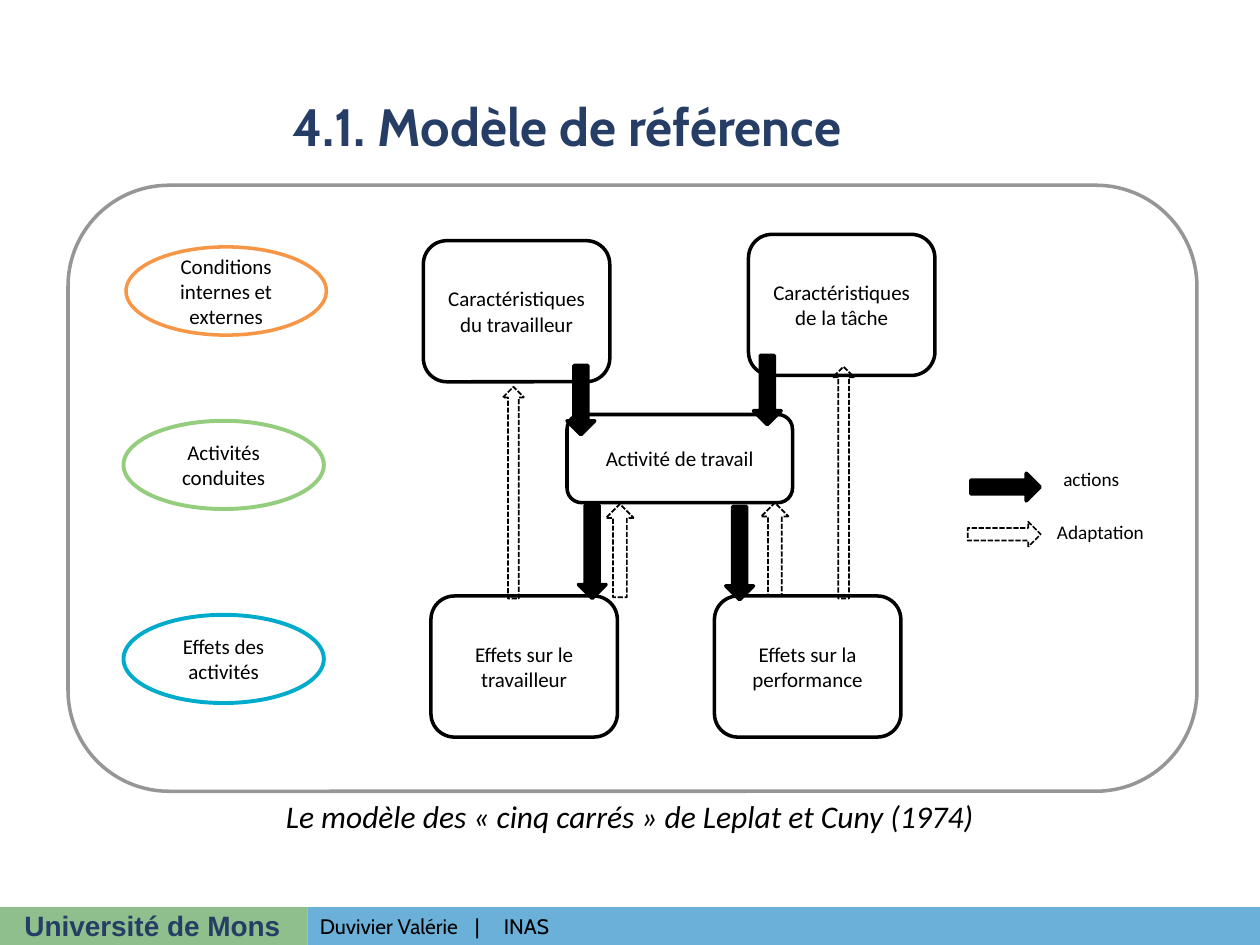
from dataclasses import dataclass

from lxml import etree
from pptx import Presentation
from pptx.dml.color import RGBColor
from pptx.enum import dml, shapes, text
from pptx.oxml.ns import qn
from pptx.util import Inches, Pt

COLORS = {
    "black": "000000", "white": "FFFFFF", "navy": "263E65", "gray": "969696",
    "sage": "8EBF8C", "sky": "6AB0D8",
    "orange": "F79646", "green": "94CD7E", "cyan": "00ABCC",
}
KIND = shapes.MSO_SHAPE
CENTER = text.PP_ALIGN.CENTER
MIDDLE = text.MSO_ANCHOR.MIDDLE


@dataclass
class Node:
    label: str
    left: float
    top: float
    width: float = 1.48
    height: float = 1.12
    kind: int = KIND.ROUNDED_RECTANGLE
    line: str = "black"
    weight: float = 2
    fill: str = ""


@dataclass
class Arrow:
    left: float
    top: float
    height: float
    turn: int = 0
    width: float = 0.22
    solid: bool = True


@dataclass
class Label:
    words: str
    left: float
    top: float
    width: float
    height: float
    size: int
    font: str = "Calibri"
    color: str = "black"
    bold: bool = False
    italic: bool = False
    center: bool = False
    middle: bool = False


def oval(label: str, left: float, top: float, line: str, weight: float = 2.25) -> Node:
    return Node(label, left, top, 1.59, 0.7, KIND.OVAL, line, weight)


def dashed(left: float, top: float, height: float, turn: int = 180,
           width: float = 0.22) -> Arrow:
    return Arrow(left, top, height, turn, width, solid=False)


STAGES = [
    oval("Conditions internes et externes", 1, 1.96, "orange", 2),
    oval("Activités conduites", 0.98, 3.34, "green"),
    oval("Effets des activités", 0.98, 4.88, "cyan"),
]
BOXES = [
    Node("Caractéristiques du travailleur", 3.36, 1.91),
    Node("Caractéristiques de la tâche", 5.94, 1.86),
    Node("Activité de travail", 4.5, 3.29, 1.79, 0.7, fill="white"),
    Node("Effets sur le travailleur", 3.42, 4.73),
    Node("Effets sur la performance", 5.67, 4.73),
]
ACTIONS = [
    Arrow(4.5, 2.9, 0.55), Arrow(5.98, 2.82, 0.55),
    Arrow(5.76, 4.02, 0.74), Arrow(4.59, 4.01, 0.74),
]
ADAPTS = [
    dashed(4.81, 4, 0.74), dashed(6.04, 3.99, 0.74),
    dashed(6.61, 2.91, 1.84, width=0.17), dashed(3.99, 3.07, 1.68, width=0.17),
]
LEGEND = [Arrow(7.87, 3.59, 0.55, 270), dashed(7.87, 3.95, 0.58, 270, 0.2)]
LABELS = [
    Label("actions", 8.34, 3.66, 0.91, 0.34, 11),
    Label("Adaptation", 8.29, 4.08, 1.66, 0.54, 11),
    Label("Le modèle des «\u00a0cinq carrés\u00a0» de Leplat et Cuny (1974)",
          0.25, 6.28, 9.5, 0.45, 18, italic=True, center=True),
    Label("Université de Mons", -0.01, 7.16, 2.44, 0.37, 16, "Arial", "navy",
          bold=True, center=True),
]
AUTHOR = Label("Duvivier Valérie\t|\tINAS", 2.44, 7.2, 7, 0.3, 12, "Cabin", middle=True)


def rgb(name: str) -> RGBColor:
    return RGBColor.from_string(COLORS[name])


def write(frame, words: str, size: int, font: str = "Calibri", color: str = "black",
          bold: bool = False, italic: bool = False) -> None:
    frame.word_wrap = True
    frame.text = words
    for run in frame.paragraphs[0].runs:
        face = run.font
        face.name, face.size = font, Pt(size)
        face.bold, face.italic = bold, italic
        face.color.rgb = rgb(color)


def add_form(slide, kind: int, left: float, top: float, width: float, height: float,
             fill: str = "", line: str = "", weight: float = 2):
    """Add a preset shape; an empty colour name means no fill or no line."""
    form = slide.shapes.add_shape(kind, Inches(left), Inches(top),
                                  Inches(width), Inches(height))
    form.shadow.inherit = False
    if fill:
        form.fill.solid()
        form.fill.fore_color.rgb = rgb(fill)
    else:
        form.fill.background()
    if line:
        form.line.color.rgb = rgb(line)
        form.line.width = Pt(weight)
    else:
        form.line.fill.background()
    return form


def add_node(slide, node: Node) -> None:
    form = add_form(slide, node.kind, node.left, node.top, node.width, node.height,
                    node.fill, node.line, node.weight)
    write(form.text_frame, node.label, 12)
    form.text_frame.vertical_anchor = MIDDLE
    form.text_frame.paragraphs[0].alignment = CENTER


def add_arrow(slide, arrow: Arrow) -> None:
    form = add_form(slide, KIND.DOWN_ARROW, arrow.left, arrow.top, arrow.width,
                    arrow.height, "black" if arrow.solid else "", "black",
                    2 if arrow.solid else 1)
    form.rotation = arrow.turn
    if not arrow.solid:
        form.line.dash_style = dml.MSO_LINE.SQUARE_DOT


def add_label(slide, label: Label):
    box = slide.shapes.add_textbox(Inches(label.left), Inches(label.top),
                                   Inches(label.width), Inches(label.height))
    frame = box.text_frame
    write(frame, label.words, label.size, label.font, label.color,
          label.bold, label.italic)
    if label.center:
        frame.paragraphs[0].alignment = CENTER
    if label.middle:
        frame.vertical_anchor = MIDDLE
    return box


def set_tabs(para, stops: list[float]) -> None:
    tabs = etree.SubElement(para._p.get_or_add_pPr(), qn("a:tabLst"))
    for stop in stops:
        etree.SubElement(tabs, qn("a:tab"), pos=str(Inches(stop)), algn="l")


def add_title(slide) -> None:
    title = slide.shapes.title
    title.left, title.top = Inches(0), Inches(0.3)
    title.width, title.height = Inches(9), Inches(1.4)
    write(title.text_frame, "4.1. Modèle de référence", 30, "Cabin", "navy", bold=True)
    title.text_frame.vertical_anchor = MIDDLE
    title.text_frame.paragraphs[0].alignment = CENTER


def main() -> None:
    deck = Presentation()
    deck.slide_width, deck.slide_height = Inches(10), Inches(7.5)
    slide = deck.slides.add_slide(deck.slide_layouts[5])
    add_title(slide)
    add_form(slide, KIND.RECTANGLE, 0, 7.2, 2.44, 0.3, "sage")
    add_form(slide, KIND.RECTANGLE, 2.44, 7.2, 7.56, 0.3, "sky")
    add_form(slide, KIND.ROUNDED_RECTANGLE, 0.54, 1.47, 8.96, 4.81, line="gray")
    for node in STAGES + BOXES:
        add_node(slide, node)
    for arrow in ACTIONS + ADAPTS + LEGEND:
        add_arrow(slide, arrow)
    for label in LABELS:
        add_label(slide, label)
    author = add_label(slide, AUTHOR)
    set_tabs(author.text_frame.paragraphs[0], [1.23, 1.46])
    deck.save("out.pptx")


if __name__ == "__main__":
    main()
